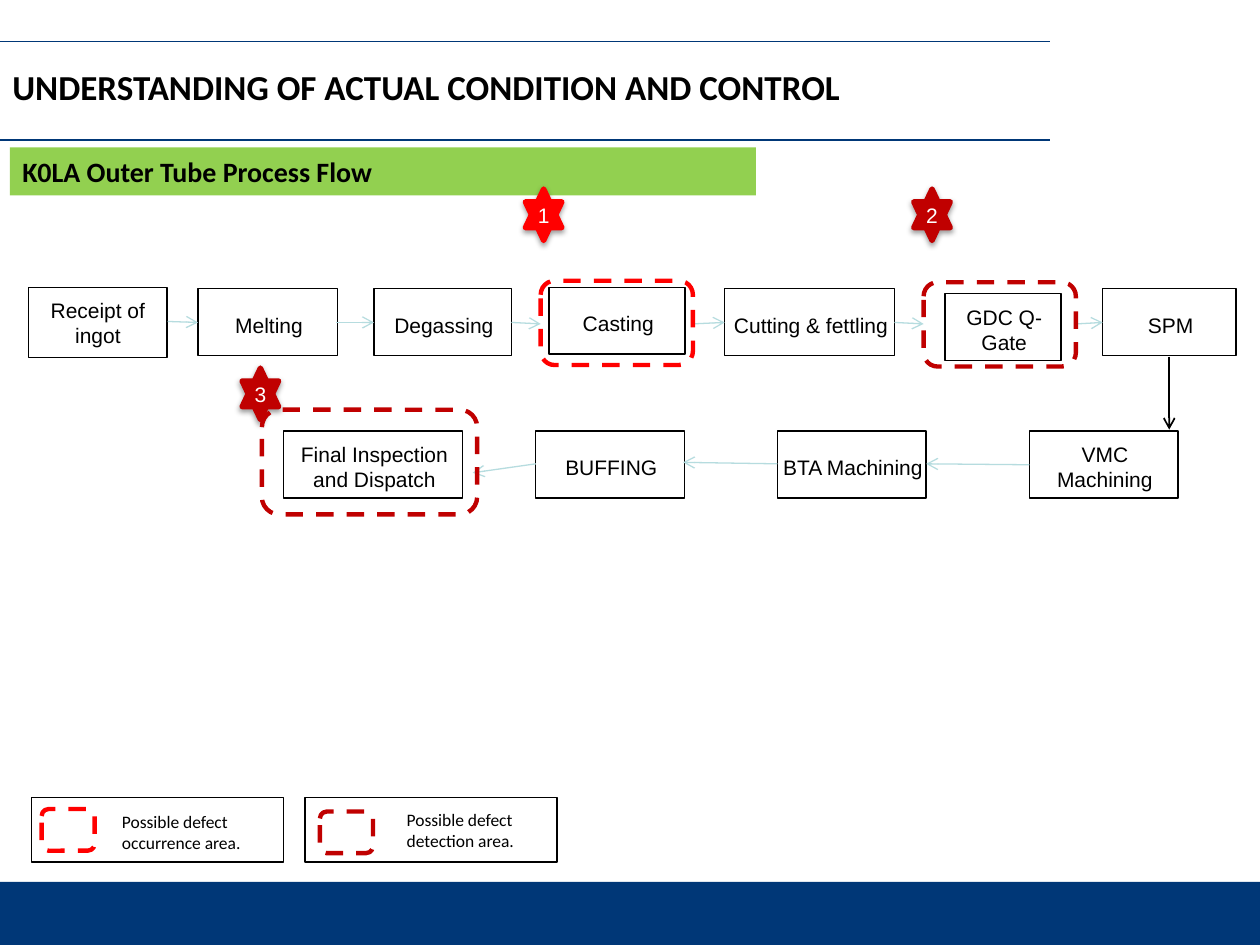
from lxml import etree
from pptx import Presentation
from pptx.dml.color import RGBColor
from pptx.enum.dml import MSO_LINE
from pptx.enum.shapes import MSO_CONNECTOR, MSO_SHAPE
from pptx.enum.text import MSO_ANCHOR, PP_ALIGN
from pptx.oxml import parse_xml
from pptx.oxml.ns import nsdecls, qn
from pptx.util import Cm, Pt

RECT, ROUND, STAR = MSO_SHAPE.RECTANGLE, MSO_SHAPE.ROUNDED_RECTANGLE, MSO_SHAPE.STAR_6_POINT
STRAIGHT, DASH = MSO_CONNECTOR.STRAIGHT, MSO_LINE.DASH
MIDDLE = MSO_ANCHOR.MIDDLE
LEFT, CENTER = PP_ALIGN.LEFT, PP_ALIGN.CENTER

NAVY, GREEN, BLACK, WHITE = "003777", "92D050", "000000", "FFFFFF"
RED, DARK_RED, TEAL = "FF0000", "C00000", "B6DCDF"

DEFAULT_INSETS = (0.25, 0.13, 0.25, 0.13)
STEP_INSETS = (0.05, 0.1, 0, 0)
STEP_H = 1.35

# Process steps: text, left, top, width
STEPS = [
    ("Melting", 3.99, 5.82, 2.82),
    ("Degassing", 7.54, 5.82, 2.77),
    ("Casting", 11.07, 5.79, 2.74),
    ("Cutting & fettling", 14.61, 5.82, 3.43),
    ("GDC Q-Gate", 19.05, 5.92, 2.34),
    ("SPM", 22.23, 5.82, 2.69),
    ("VMC Machining", 20.75, 8.69, 3),
    ("BTA Machining", 15.67, 8.69, 3),
    ("BUFFING", 10.8, 8.69, 3),
    ("Final Inspection and Dispatch", 5.72, 8.69, 3.61),
]

# Flow arrows: start x, start y, end x, end y
ARROWS = [
    (3.38, 6.48, 3.99, 6.5),
    (6.78, 6.5, 7.54, 6.5),
    (10.31, 6.5, 10.9, 6.53),
    (13.94, 6.53, 14.61, 6.5),
    (18.03, 6.5, 18.62, 6.53),
    (21.69, 6.53, 22.23, 6.5),
    (20.75, 9.37, 18.67, 9.35),
    (15.67, 9.35, 13.77, 9.32),
    (10.8, 9.35, 9.53, 9.53),
]

# Defect areas: left, top, width, height, colour
AREAS = [
    (10.9, 5.66, 3.07, 1.7, RED),
    (18.62, 5.69, 3.07, 1.7, DARK_RED),
    (5.28, 8.26, 4.34, 2.11, DARK_RED),
]

# Numbered stars: number, left, top, colour
STARS = [("1", 10.59, 3.81, RED), ("2", 18.42, 3.81, DARK_RED), ("3", 4.88, 7.42, DARK_RED)]

# Legend: text, frame left, key left, key top, label left, label top, colour
LEGEND = [
    ("Possible defect occurrence area.", 0.64, 0.84, 16.31, 2.21, 16.21, RED),
    ("Possible defect detection area.", 6.15, 6.45, 16.36, 7.95, 16.18, DARK_RED),
]


def rgb(color):
    return RGBColor.from_string(color)


def write(s, text, size, font="Arial", color=BLACK, bold=False, align=CENTER,
          insets=DEFAULT_INSETS):
    tf = s.text_frame
    tf.word_wrap = True
    tf.vertical_anchor = MIDDLE
    tf.margin_left, tf.margin_top, tf.margin_right, tf.margin_bottom = map(Cm, insets)
    p = tf.paragraphs[0]
    p.alignment = align
    r = p.add_run()
    r.text = text
    r.font.size, r.font.name, r.font.bold = Pt(size), font, bold
    r.font.color.rgb = rgb(color)


def add_box(slide, kind, x, y, w, h, fill=None, line=None, width=0.75):
    s = slide.shapes.add_shape(kind, Cm(x), Cm(y), Cm(w), Cm(h))
    s.shadow.inherit = False
    if fill:
        s.fill.solid()
        s.fill.fore_color.rgb = rgb(fill)
    else:
        s.fill.background()
    if line:
        s.line.color.rgb = rgb(line)
        s.line.width = Pt(width)
    else:
        s.line.fill.background()
    return s


def add_step(slide, text, x, y, w, h=STEP_H, insets=STEP_INSETS):
    s = add_box(slide, RECT, x, y, w, h, line=BLACK)
    write(s, text, 12, insets=insets)


def add_area(slide, x, y, w, h, color):
    s = add_box(slide, ROUND, x, y, w, h, line=color, width=2.5)
    s.line.dash_style = DASH


def add_star(slide, number, x, y, color):
    s = add_box(slide, STAR, x, y, 0.74, 1.04, color, color, 3)
    write(s, number, 12, color=WHITE, insets=(0, 0.1, 0, 0.1))
    effects = s._element.spPr.find(qn("a:effectLst"))
    effects.append(parse_xml(
        f'<a:outerShdw {nsdecls("a")} blurRad="{Pt(3.1)}" dist="{Pt(1.6)}" dir="5400000" '
        'rotWithShape="0"><a:srgbClr val="000000"><a:alpha val="38000"/></a:srgbClr>'
        '</a:outerShdw>'))


def add_line(slide, x1, y1, x2, y2, color, width=0.75, arrow=False):
    s = slide.shapes.add_connector(STRAIGHT, Cm(x1), Cm(y1), Cm(x2), Cm(y2))
    s.line.color.rgb = rgb(color)
    s.line.width = Pt(width)
    if arrow:
        etree.SubElement(s.line._get_or_add_ln(), qn("a:tailEnd"), type="arrow")
    etree.SubElement(s._element.spPr, qn("a:effectLst"))


def add_legend(slide, text, x, key_x, key_y, label_x, label_y, color):
    add_box(slide, RECT, x, 16.08, 5.08, 1.3, WHITE, BLACK)
    add_area(slide, key_x, key_y, 1.07, 0.84, color)
    s = slide.shapes.add_textbox(Cm(label_x), Cm(label_y), Cm(3.38), Cm(1.12))
    write(s, text, 10, "Calibri", align=LEFT)


def add_title(slide, text):
    s = slide.shapes.title
    s.left, s.top, s.width, s.height = Cm(0), Cm(1.27), Cm(18.69), Cm(0.94)
    write(s, text, 20, "Calibri", bold=True, align=LEFT)


def main():
    prs = Presentation()
    prs.slide_width, prs.slide_height = Cm(25.4), Cm(19.05)
    slide = prs.slides.add_slide(prs.slide_layouts[5])

    # Footer band, title and its rules
    add_box(slide, RECT, 0, 17.78, 25.4, 1.27, NAVY)
    for y in (0.84, 2.82):
        add_line(slide, 0, y, 21.16, y, NAVY)
    add_title(slide, "UNDERSTANDING OF ACTUAL CONDITION AND CONTROL")

    # Section heading
    s = add_box(slide, RECT, 0.2, 2.97, 15.04, 0.97, GREEN)
    write(s, "K0LA Outer Tube Process Flow", 16, "Calibri", bold=True, align=LEFT)

    # Process flow
    add_step(slide, "Receipt of ingot", 0.58, 5.79, 2.79, 1.42, DEFAULT_INSETS)
    for step in STEPS:
        add_step(slide, *step)
    for arrow in ARROWS:
        add_line(slide, *arrow, TEAL, arrow=True)
    add_line(slide, 23.57, 7.19, 23.57, 8.66, BLACK, 1, arrow=True)

    # Defect markers
    for star in STARS:
        add_star(slide, *star)
    for area in AREAS:
        add_area(slide, *area)

    # Legend
    for entry in LEGEND:
        add_legend(slide, *entry)

    prs.save("out.pptx")


if __name__ == "__main__":
    main()
